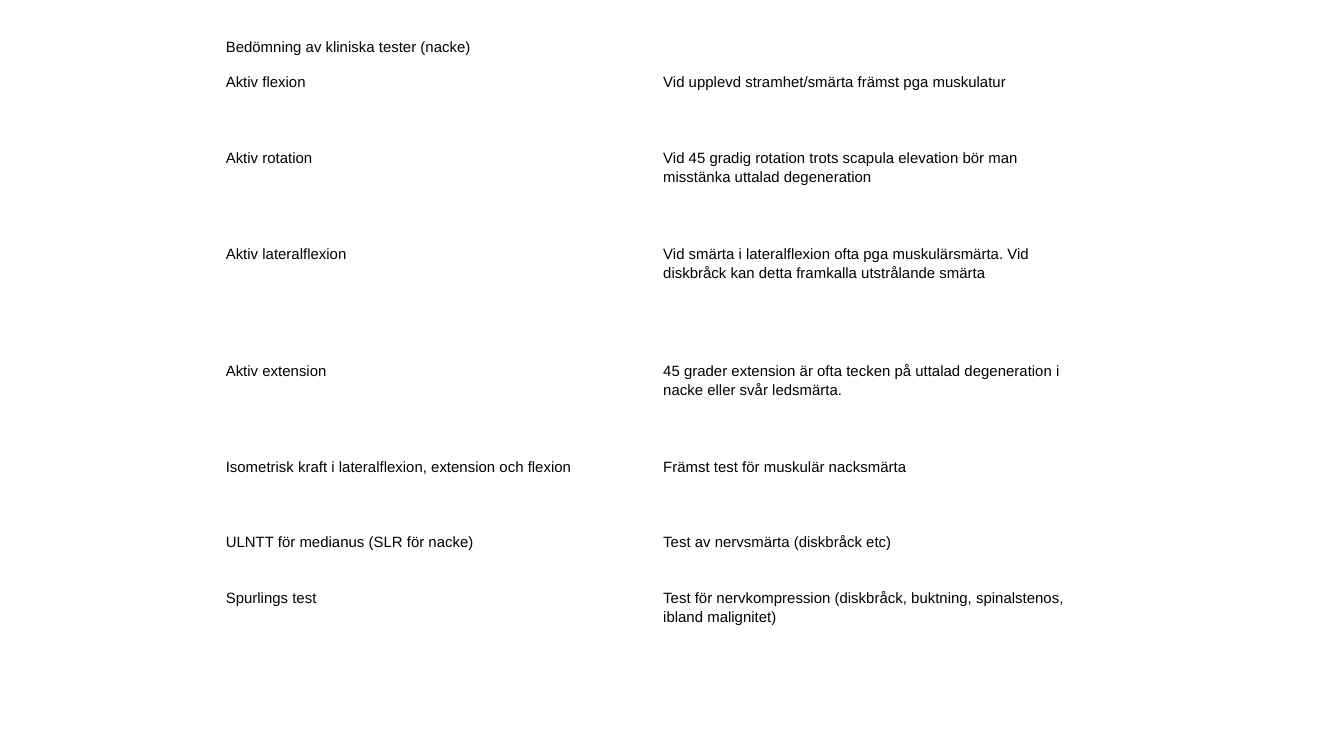
from dataclasses import dataclass

from pptx import Presentation
from pptx.dml.color import RGBColor
from pptx.enum.text import MSO_ANCHOR, PP_ALIGN
from pptx.util import Inches, Pt

TOP = MSO_ANCHOR.TOP
LEFT = PP_ALIGN.LEFT


@dataclass(frozen=True)
class Theme:
    font: str = "Arial"
    text_size: float = 8
    line_spacing: float = 1.15
    cell_margin: float = 0.06
    text_color: RGBColor = RGBColor(0, 0, 0)
    background: RGBColor = RGBColor(255, 255, 255)


THEME = Theme()
# Widescreen format, 16:9
SLIDE_WIDTH = 10
SLIDE_HEIGHT = SLIDE_WIDTH * 9 / 16
TABLE_BOX = (1.62, 0.21, 6.51, 4.81)

TITLE = "Bedömning av kliniska tester (nacke)"
TITLE_HEIGHT = 0.26
# Test, interpretation, row height in inches
TESTS = [
    ("Aktiv flexion", "Vid upplevd stramhet/smärta främst pga muskulatur", 0.56),
    ("Aktiv rotation",
     "Vid 45 gradig rotation trots scapula elevation bör man "
     "misstänka uttalad degeneration", 0.71),
    ("Aktiv lateralflexion",
     "Vid smärta i lateralflexion ofta pga muskulärsmärta. Vid "
     "diskbråck kan detta framkalla utstrålande smärta", 0.87),
    ("Aktiv extension",
     "45 grader extension är ofta tecken på uttalad degeneration i "
     "nacke eller svår ledsmärta.", 0.71),
    ("Isometrisk kraft i lateralflexion, extension och flexion",
     "Främst test för muskulär nacksmärta", 0.56),
    ("ULNTT för medianus (SLR för nacke)",
     "Test av nervsmärta (diskbråck etc)", 0.41),
    ("Spurlings test",
     "Test för nervkompression (diskbråck, buktning, spinalstenos, "
     "ibland malignitet)", 0.71),
]


def write_cell(cell, text):
    cell.fill.solid()
    cell.fill.fore_color.rgb = THEME.background
    cell.vertical_anchor = TOP
    margin = Inches(THEME.cell_margin)
    cell.margin_left = cell.margin_right = margin
    cell.margin_top = cell.margin_bottom = margin
    paragraph = cell.text_frame.paragraphs[0]
    paragraph.alignment = LEFT
    paragraph.line_spacing = THEME.line_spacing
    run = paragraph.add_run()
    run.text = text
    run.font.name = THEME.font
    run.font.size = Pt(THEME.text_size)
    run.font.bold = False
    run.font.color.rgb = THEME.text_color


def add_test_table(slide, box):
    left, top, width, height = box
    heights = [TITLE_HEIGHT] + [row_height for _, _, row_height in TESTS]
    table = slide.shapes.add_table(
        len(heights), 2,
        Inches(left), Inches(top), Inches(width), Inches(height)).table
    table.first_row = False
    table.horz_banding = False

    # Row heights share out the height of the box
    scale = height / sum(heights)
    for row, row_height in zip(table.rows, heights):
        row.height = Inches(row_height * scale)

    # Title across both columns
    table.cell(0, 0).merge(table.cell(0, 1))
    write_cell(table.cell(0, 0), TITLE)

    # One row per test
    for row_index, (test, interpretation, _) in enumerate(TESTS, start=1):
        write_cell(table.cell(row_index, 0), test)
        write_cell(table.cell(row_index, 1), interpretation)


def main():
    presentation = Presentation()
    presentation.slide_width = Inches(SLIDE_WIDTH)
    presentation.slide_height = Inches(SLIDE_HEIGHT)
    slide = presentation.slides.add_slide(presentation.slide_layouts[6])
    slide.background.fill.solid()
    slide.background.fill.fore_color.rgb = THEME.background
    add_test_table(slide, TABLE_BOX)
    presentation.save("out.pptx")


if __name__ == "__main__":
    main()
